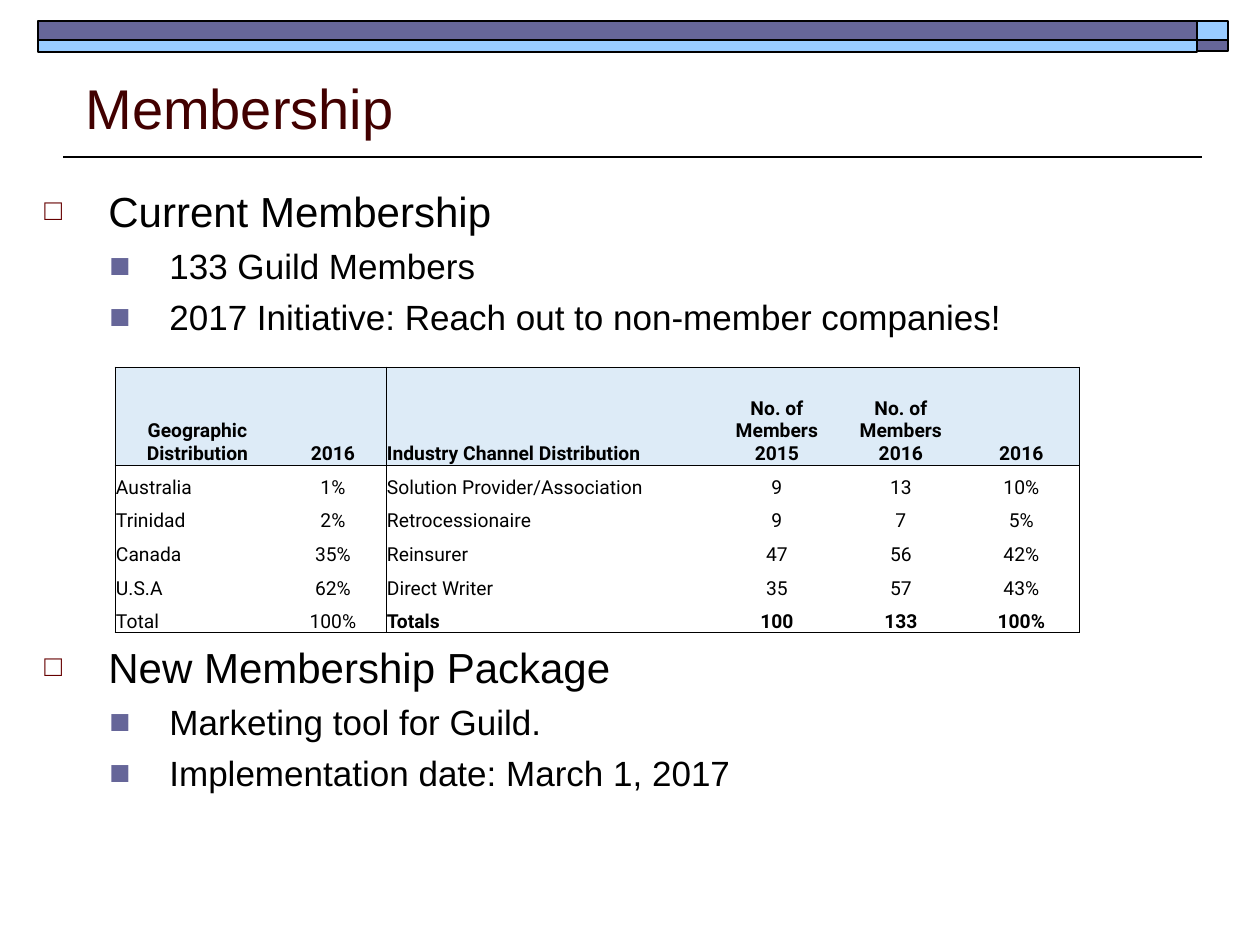
from typing import NamedTuple

from lxml.etree import SubElement
from pptx import Presentation
from pptx.dml.color import RGBColor
from pptx.enum.shapes import MSO_CONNECTOR, MSO_SHAPE
from pptx.enum.text import MSO_ANCHOR, PP_ALIGN
from pptx.oxml import parse_xml
from pptx.oxml.ns import nsdecls, qn
from pptx.util import Emu, Pt

SCALE = 914400 / 126  # EMU in one px
COLORS = {
    "ink": "000000",
    "title": "420000",
    "purple": "666699",
    "sky": "99CCFF",
    "maroon": "660000",
    "header": "DDEBF7",
}


class Bar(NamedTuple):
    x: int
    y: int
    w: int
    h: int
    color: str


class Level(NamedTuple):
    indent: int
    hang: int
    size: int
    bullet: str
    bullet_color: str
    bullet_pct: int


class Item(NamedTuple):
    text: str
    level: int
    before: int = 5


BARS = [
    Bar(1197, 21, 31, 19, "sky"),
    Bar(38, 21, 1159, 19, "purple"),
    Bar(38, 40, 1159, 12, "sky"),
    Bar(1197, 40, 31, 11, "purple"),
]
LEVELS = [
    Level(64, 64, 24, "□", "maroon", 70),
    Level(125, 60, 20, "■", "purple", 100),
]
TABLE_GAP = 174  # points left free for the table
ITEMS = [
    Item("Current Membership", 0),
    Item("133 Guild Members", 1),
    Item("2017 Initiative: Reach out to non-member companies!", 1),
    Item("New Membership Package", 0, TABLE_GAP),
    Item("Marketing tool for Guild.", 1),
    Item("Implementation date: March 1, 2017", 1),
]
COL_WIDTHS = [165, 106, 329, 124, 124, 117]
ROW_HEIGHTS = [98, 34, 33, 34, 34, 33]
LABEL_COLS = (0, 2)
ROWS = [
    ["Geographic Distribution", "2016", "Industry Channel Distribution",
     "No. of Members 2015", "No. of Members 2016", "2016"],
    ["Australia", "1%", "Solution Provider/Association", "9", "13", "10%"],
    ["Trinidad", "2%", "Retrocessionaire", "9", "7", "5%"],
    ["Canada", "35%", "Reinsurer", "47", "56", "42%"],
    ["U.S.A", "62%", "Direct Writer", "35", "57", "43%"],
    ["Total", "100%", "Totals", "100", "133", "100%"],
]


def px(n: int) -> Emu:
    return Emu(round(n * SCALE))


def rgb(name: str) -> RGBColor:
    return RGBColor.from_string(COLORS[name])


def set_all(obj, values: dict) -> None:
    for name, value in values.items():
        setattr(obj, name, value)


def add_run(p, text: str, color: str, **font) -> None:
    r = p.add_run()
    r.text = text
    set_all(r.font, font)
    r.font.color.rgb = rgb(color)


def add_bar(s, bar: Bar) -> None:
    sp = s.shapes.add_shape(MSO_SHAPE.RECTANGLE, *map(px, bar[:4]))
    sp.shadow.inherit = False
    sp.fill.solid()
    sp.fill.fore_color.rgb = rgb(bar.color)
    sp.line.color.rgb = rgb("ink")
    sp.line.width = Pt(1)


def add_rule(s, x1: int, x2: int, y: int) -> None:
    line = s.shapes.add_connector(MSO_CONNECTOR.STRAIGHT, px(x1), px(y), px(x2), px(y))
    line.line.color.rgb = rgb("ink")
    line.line.width = Pt(1)
    SubElement(line._element.spPr, qn("a:effectLst"))


def add_text_frame(s, x: int, y: int, w: int, h: int, anchor):
    tf = s.shapes.add_textbox(px(x), px(y), px(w), px(h)).text_frame
    set_all(tf, {"word_wrap": True, "vertical_anchor": anchor})
    return tf


def add_item(p, item: Item) -> None:
    level = LEVELS[item.level]
    set_all(p, {"level": item.level, "space_before": Pt(item.before)})
    pPr = p._p.get_or_add_pPr()
    pPr.set("marL", str(px(level.indent)))
    pPr.set("indent", str(-px(level.hang)))
    clr = SubElement(pPr, qn("a:buClr"))
    SubElement(clr, qn("a:srgbClr"), val=COLORS[level.bullet_color])
    SubElement(pPr, qn("a:buSzPct"), val=str(level.bullet_pct * 1000))
    SubElement(pPr, qn("a:buFont"), typeface="Arial")
    SubElement(pPr, qn("a:buChar"), char=level.bullet)
    add_run(p, item.text, "ink", name="Arial", size=Pt(level.size))


def set_borders(cell, row: int, col: int) -> None:
    last_row, last_col = len(ROWS) - 1, len(COL_WIDTHS) - 1
    sides = {
        "L": col in LABEL_COLS,
        "R": col in (1, last_col),
        "T": row in (0, 1),
        "B": row in (0, last_row),
    }
    tcPr = cell._tc.get_or_add_tcPr()
    for i, (side, shown) in enumerate(sides.items()):
        paint = (f'<a:solidFill><a:srgbClr val="{COLORS["ink"]}"/></a:solidFill>'
                 if shown else "<a:noFill/>")
        tcPr.insert(i, parse_xml(
            f'<a:ln{side} {nsdecls("a")} w="{Pt(0.5)}">{paint}</a:ln{side}>'))


def fill_cell(cell, row: int, col: int) -> None:
    set_all(cell, {"margin_left": px(1), "margin_right": px(1), "margin_top": px(1),
                   "margin_bottom": 0, "vertical_anchor": MSO_ANCHOR.BOTTOM})
    if row == 0:
        cell.fill.solid()
        cell.fill.fore_color.rgb = rgb("header")
    else:
        cell.fill.background()
    set_borders(cell, row, col)
    p = cell.text_frame.paragraphs[0]
    p.alignment = PP_ALIGN.LEFT if col == 2 or (col == 0 and row) else PP_ALIGN.CENTER
    bold = row == 0 or (row == len(ROWS) - 1 and col >= 2)
    add_run(p, ROWS[row][col], "ink", name="Roboto", size=Pt(11), bold=bold)


def add_members_table(s, x: int, y: int) -> None:
    table = s.shapes.add_table(len(ROWS), len(COL_WIDTHS), px(x), px(y),
                               px(sum(COL_WIDTHS)), px(sum(ROW_HEIGHTS))).table
    set_all(table, {"first_row": False, "horz_banding": False})
    for column, width in zip(table.columns, COL_WIDTHS):
        column.width = px(width)
    for i, height in enumerate(ROW_HEIGHTS):
        table.rows[i].height = px(height)
        for j in range(len(COL_WIDTHS)):
            fill_cell(table.cell(i, j), i, j)


def main() -> None:
    prs = Presentation()
    set_all(prs, {"slide_width": px(1260), "slide_height": px(945)})
    s = prs.slides.add_slide(prs.slide_layouts[6])

    # Rule and top bars
    add_rule(s, 63, 1202, 157)
    for bar in BARS:
        add_bar(s, bar)

    # Title
    tf = add_text_frame(s, 73, 10, 1134, 137, MSO_ANCHOR.BOTTOM)
    add_run(tf.paragraphs[0], "Membership", "title", name="Arial", size=Pt(32))

    # Bulleted list
    tf = add_text_frame(s, 32, 179, 1187, 735, MSO_ANCHOR.TOP)
    for i, item in enumerate(ITEMS):
        add_item(tf.add_paragraph() if i else tf.paragraphs[0], item)

    # Membership table
    add_members_table(s, 115, 367)

    prs.save("out.pptx")


if __name__ == "__main__":
    main()
